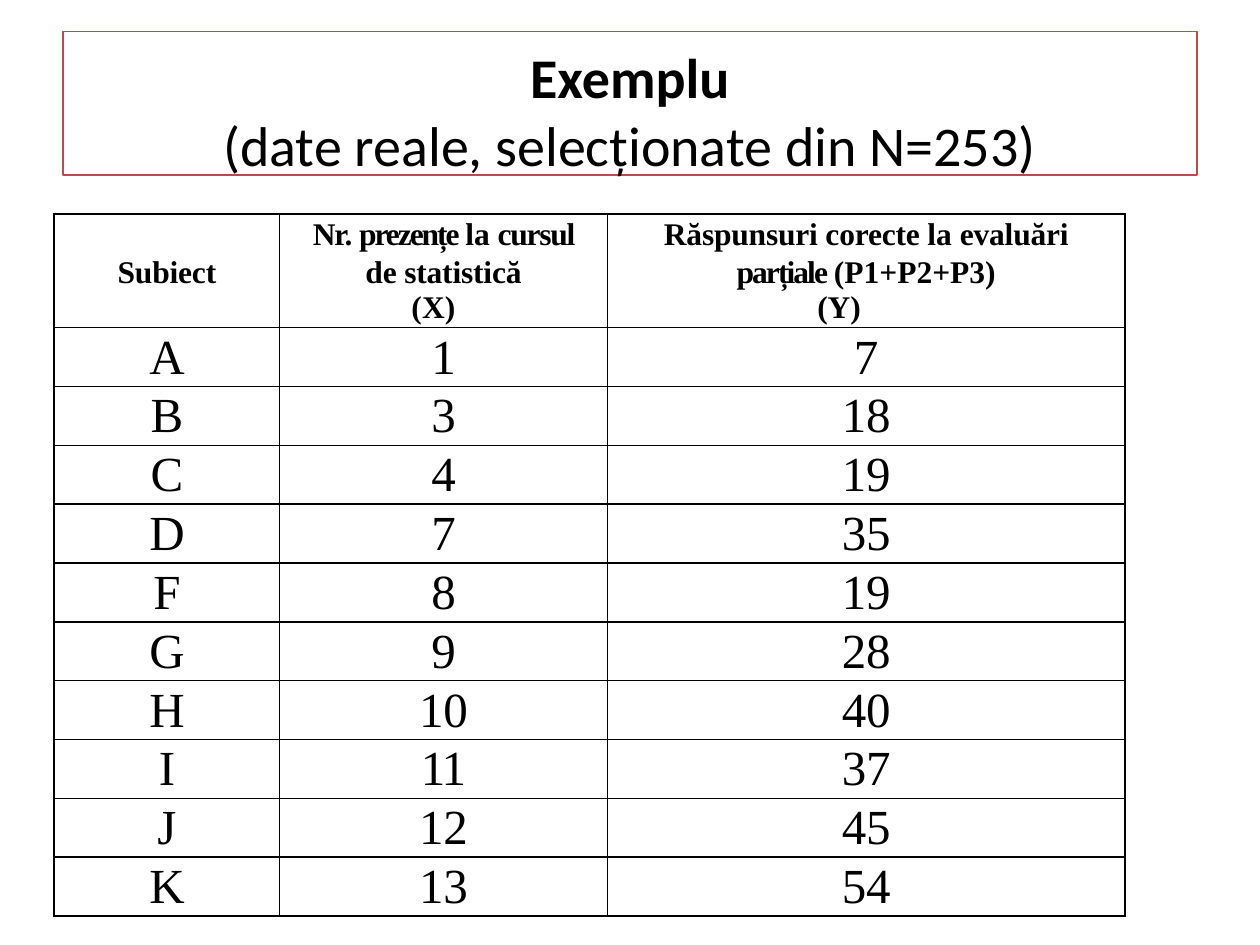
import pptx
import pptx.util
import pptx.dml.color
import pptx.enum.text
from lxml import etree
from pptx.oxml.ns import qn

Inches, Pt = pptx.util.Inches, pptx.util.Pt
BLACK = pptx.dml.color.RGBColor(0x00, 0x00, 0x00)
RED = pptx.dml.color.RGBColor(0xBD, 0x4A, 0x47)
CENTER = pptx.enum.text.PP_ALIGN.CENTER
TOP = pptx.enum.text.MSO_ANCHOR.TOP
MIDDLE = pptx.enum.text.MSO_ANCHOR.MIDDLE

COLUMN_WIDTHS = [1.79, 2.6, 4.11]
HEADER_HEIGHT = 0.9
# Each header cell is a list of (side indents in inches, line pitch, runs);
# a run is (text, letter spacing in points).
HEADERS = [
    [((0, 0), 21.6, [("Subiect", -0.1)])],
    [((0.16, 0.16), 21.6, [("Nr. ", -0.6), ("prezențe ", -1.2), ("la ", 0),
                           ("cursul ", -0.7), ("de statistică", -0.1)]),
     ((0, 0.16), 20.4, [("(X)", 0.1)])],
    [((0.4, 0.4), 21.6, [("Răspunsuri corecte ", -0.1), ("la ", 0),
                         ("evaluări ", -0.1), ("parțiale ", -1.1),
                         ("(P1+P2+P3)", 0)]),
     ((0, 0.43), 20.4, [("(Y)", -0.1)])],
]
SCORES = [("A", 1, 7), ("B", 3, 18), ("C", 4, 19), ("D", 7, 35), ("F", 8, 19),
          ("G", 9, 28), ("H", 10, 40), ("I", 11, 37), ("J", 12, 45),
          ("K", 13, 54)]


def set_font(p, name, size, bold):
    p.font.name, p.font.size, p.font.bold = name, Pt(size), bold
    p.font.color.rgb = BLACK


def add_title(s, left, top, width, height):
    title = s.shapes.title
    title.left, title.top = Inches(left), Inches(top)
    title.width, title.height = Inches(width), Inches(height)
    title.line.color.rgb = RED
    title.line.width = Pt(0.72)
    tf = title.text_frame
    tf.auto_size = pptx.enum.text.MSO_AUTO_SIZE.NONE
    tf.vertical_anchor = TOP
    tf.margin_left = tf.margin_right = tf.margin_bottom = 0
    tf.margin_top = Inches(0.09)
    tf.text = "Exemplu\n(date reale, selecționate din N=253)"
    for p, bold in zip(tf.paragraphs, (True, False)):
        p.alignment = CENTER
        p.line_spacing = 1.0
        p.space_before = Pt(0)
        set_font(p, "Calibri", 32, bold)


def format_cell(cell, anchor):
    """Give the cell black borders, no fill and no margins."""
    tc_pr = cell._tc.get_or_add_tcPr()
    for side in ("lnL", "lnR", "lnT", "lnB"):
        ln = etree.SubElement(tc_pr, qn("a:" + side), w=str(Pt(1)))
        fill = etree.SubElement(ln, qn("a:solidFill"))
        etree.SubElement(fill, qn("a:srgbClr"), val=str(BLACK))
    cell.fill.background()
    cell.vertical_anchor = anchor
    cell.margin_left = cell.margin_right = 0
    cell.margin_top = cell.margin_bottom = 0


def write_cell(cell, paragraphs, size, bold):
    tf = cell.text_frame
    for i, (indents, pitch, runs) in enumerate(paragraphs):
        p = tf.add_paragraph() if i else tf.paragraphs[0]
        p.alignment = CENTER
        p.line_spacing = Pt(pitch)
        for side, indent in zip(("marL", "marR"), indents):
            p._p.get_or_add_pPr().set(side, str(Inches(indent)))
        for text, spacing in runs:
            r = p.add_run()
            r.text = text
            if spacing:
                r._r.get_or_add_rPr().set("spc", str(round(spacing * 100)))
        set_font(p, "Times New Roman", size, bold)


def add_score_table(s, left, top, height):
    frame = s.shapes.add_table(len(SCORES) + 1, len(COLUMN_WIDTHS),
                               Inches(left), Inches(top),
                               Inches(sum(COLUMN_WIDTHS)), Inches(height))
    table = frame.table
    table.first_row = table.horz_banding = False
    for column, width in zip(table.columns, COLUMN_WIDTHS):
        column.width = Inches(width)
    for i, row in enumerate(table.rows):
        row.height = Inches((height - HEADER_HEIGHT) / len(SCORES)
                            if i else HEADER_HEIGHT)

    for j, header in enumerate(HEADERS):
        cell = table.cell(0, j)
        format_cell(cell, TOP if j else MIDDLE)
        write_cell(cell, header, 18, True)
    for i, record in enumerate(SCORES, 1):
        for j, value in enumerate(record):
            cell = table.cell(i, j)
            format_cell(cell, TOP)
            spacing = -1.1 if value == 11 else 0
            write_cell(cell, [((0, 0), 32.6, [(str(value), spacing)])],
                       28, False)


def main():
    prs = pptx.Presentation()
    prs.slide_width, prs.slide_height = Inches(10), Inches(7.5)
    s = prs.slides.add_slide(prs.slide_layouts.get_by_name("Title Only"))
    add_score_table(s, 0.43, 1.7, 5.57)
    add_title(s, 0.5, 0.25, 9, 1.14)
    prs.save("out.pptx")


if __name__ == "__main__":
    main()
